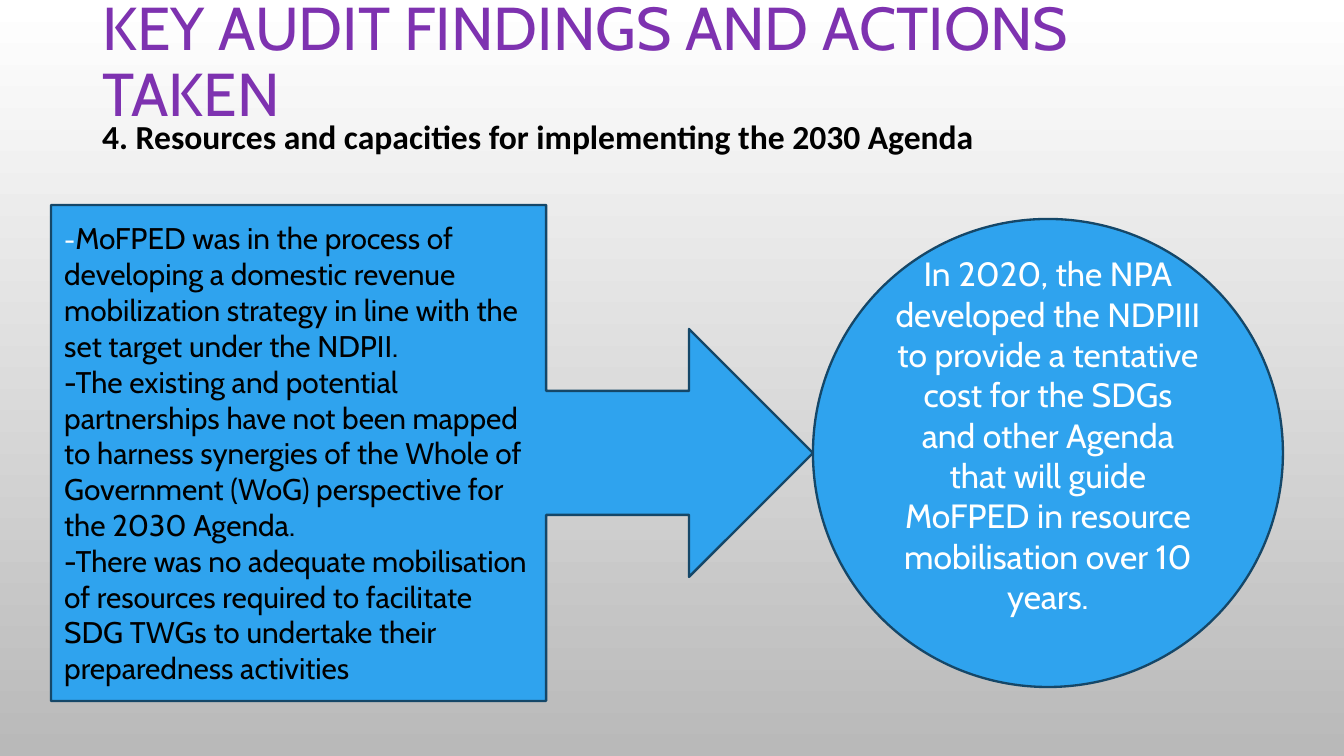
from pptx import Presentation
from pptx.dml.color import RGBColor
from pptx.enum.shapes import MSO_SHAPE
from pptx.enum.text import MSO_ANCHOR, MSO_AUTO_SIZE, PP_ALIGN
from pptx.util import Emu, Pt

EMU_PER_PX = 914400 / 134.4


def px(n):
    return Emu(round(n * EMU_PER_PX))


def rgb(value):
    return RGBColor.from_string(value)


class Deck:
    FONT = "Cabin"
    PURPLE, BLUE, NAVY = "7E32B0", "2FA3EE", "154768"
    BLACK, WHITE = "000000", "FFFFFF"

    def __init__(self, width, height):
        self.prs = Presentation()
        self.prs.slide_width, self.prs.slide_height = px(width), px(height)
        self.s = None

    def add_slide(self):
        self.s = self.prs.slides.add_slide(self.prs.slide_layouts[5])

    def background(self, top, bottom):
        fill = self.s.background.fill
        fill.gradient()
        fill.gradient_angle = 270
        for stop, color, pos in zip(fill.gradient_stops, (top, bottom), (0, 1)):
            stop.color.rgb = rgb(color)
            stop.position = pos

    def add_text(self, tf, paragraphs, align=PP_ALIGN.LEFT, anchor=MSO_ANCHOR.MIDDLE):
        """Each paragraph is a list of (text, size, color) runs."""
        tf.word_wrap = True
        tf.auto_size = MSO_AUTO_SIZE.NONE
        tf.vertical_anchor = anchor
        for i, runs in enumerate(paragraphs):
            p = tf.add_paragraph() if i else tf.paragraphs[0]
            p.alignment = align
            for text, size, color in runs:
                r = p.add_run()
                r.text = text
                r.font.name = self.FONT
                r.font.size = Pt(size)
                r.font.color.rgb = rgb(color)

    def title(self, x, y, w, h, text):
        sp = self.s.shapes.title
        sp.left, sp.top, sp.width, sp.height = map(px, (x, y, w, h))
        self.add_text(sp.text_frame, [[(text, 32.4, self.PURPLE)]])
        sp.text_frame.paragraphs[0].line_spacing = 0.9

    def subtitle(self, x, y, w, h, text):
        tf = self.s.shapes.add_textbox(*map(px, (x, y, w, h))).text_frame
        self.add_text(tf, [[(text, 18, self.BLACK)]], anchor=MSO_ANCHOR.TOP)
        font = tf.paragraphs[0].runs[0].font
        font.name, font.bold = "Calibri", True

    def shape(self, kind, x, y, w, h, paragraphs, align=PP_ALIGN.LEFT):
        sp = self.s.shapes.add_shape(kind, *map(px, (x, y, w, h)))
        sp.shadow.inherit = False
        sp.fill.solid()
        sp.fill.fore_color.rgb = rgb(self.BLUE)
        sp.line.color.rgb = rgb(self.NAVY)
        sp.line.width = Pt(1.25)
        self.add_text(sp.text_frame, paragraphs, align)
        return sp


def main():
    deck = Deck(1344, 756)
    deck.add_slide()
    deck.background("FFFFFF", "B9B9B9")

    # Headings
    deck.title(89, 19, 1166, 90, "KEY AUDIT FINDINGS AND ACTIONS TAKEN")
    deck.subtitle(89, 109, 1166, 54,
                  "4. Resources and capacities for implementing the 2030 Agenda")

    # Findings
    findings = [
        [("-", 14, deck.WHITE),
         ("MoFPED was in the process of developing a domestic revenue mobilization "
          "strategy in line with the set target under the NDPII.", 16, deck.BLACK)],
        [("-The existing and potential partnerships have not been mapped to harness "
          "synergies of the Whole of Government (WoG) perspective for the 2030 Agenda.",
          16, deck.BLACK)],
        [("-There was no adequate mobilisation of resources required to facilitate "
          "SDG TWGs to undertake their preparedness activities", 16, deck.BLACK)],
    ]
    deck.shape(MSO_SHAPE.RIGHT_ARROW_CALLOUT, 51, 205, 762, 496, findings)

    # Action taken, set a little above the centre of the circle
    action = [[("In 2020, the NPA developed the NDPIII to provide a tentative cost for "
                "the SDGs and other Agenda that will guide MoFPED in resource "
                "mobilisation over 10 years.", 18, deck.WHITE)]]
    circle = deck.shape(MSO_SHAPE.OVAL, 813, 219, 470, 468, action, PP_ALIGN.CENTER)
    circle.text_frame.margin_bottom = px(43)

    deck.prs.save("out.pptx")


if __name__ == "__main__":
    main()
